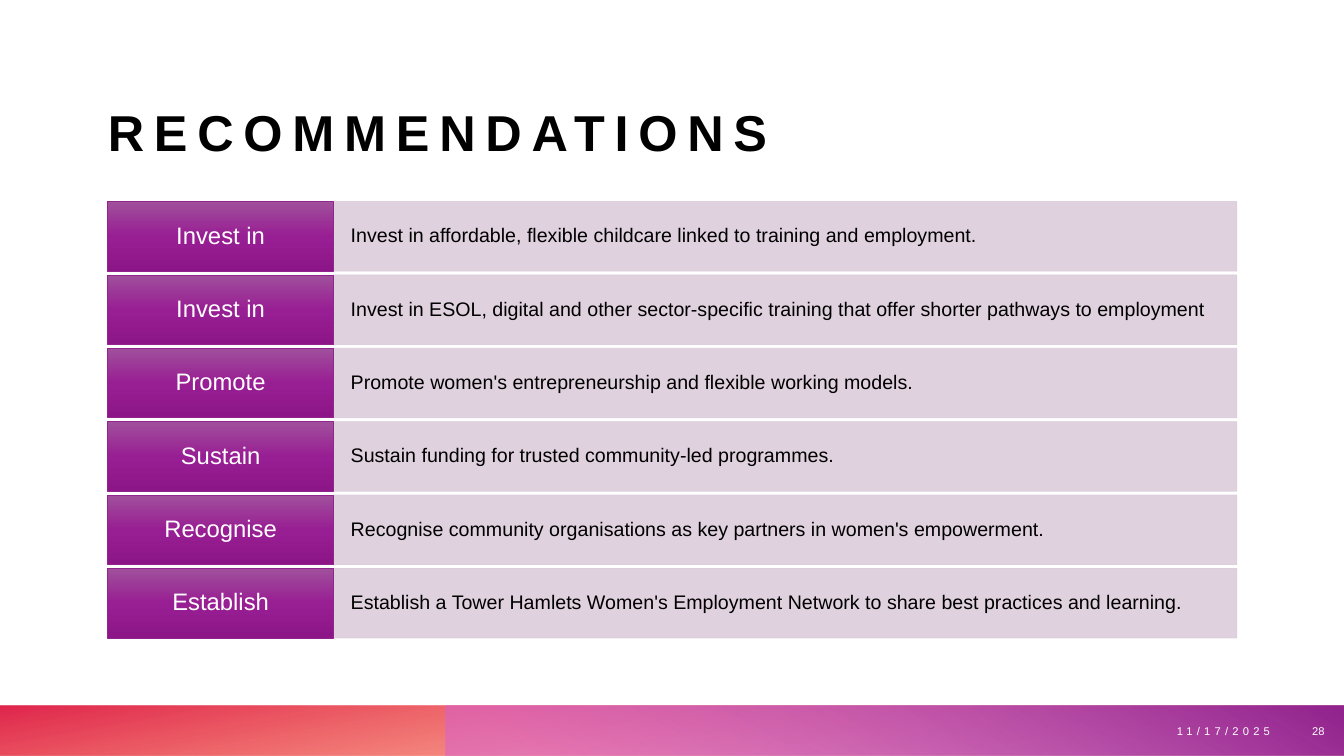
from lxml import etree
from pptx import Presentation
from pptx.dml.color import RGBColor
from pptx.enum import shapes, text
from pptx.oxml import ns
from pptx.util import Pt

RECOMMENDATIONS = [
    ("Invest in", "Invest in affordable, flexible childcare linked to training and employment."),
    ("Invest in", "Invest in ESOL, digital and other sector-specific training that offer "
                  "shorter pathways to employment"),
    ("Promote", "Promote women's entrepreneurship and flexible working models."),
    ("Sustain", "Sustain funding for trusted community-led programmes."),
    ("Recognise", "Recognise community organisations as key partners in women's empowerment."),
    ("Establish", "Establish a Tower Hamlets Women's Employment Network to share best "
                  "practices and learning."),
]
LABEL_GRADIENT = [(0, "A0509C", 100), (50, "981E93", 100), (100, "8C1687", 100)]


def colour(value):
    return RGBColor.from_string(value)


class SlideBuilder:
    font = "Arial"
    black, white = "000000", "FFFFFF"
    purple, pale = "92248E", "DCCDDB"

    def __init__(self, presentation):
        self.slide = presentation.slides.add_slide(presentation.slide_layouts[5])

    def add_text(self, shape, words, size, ink, align=text.PP_ALIGN.LEFT, bold=False,
                 anchor=text.MSO_ANCHOR.MIDDLE, inset=(7.2, 3.6), spacing=0, line_spacing=1):
        frame = shape.text_frame
        frame.word_wrap = True
        frame.auto_size = text.MSO_AUTO_SIZE.NONE
        frame.vertical_anchor = anchor
        frame.margin_left = frame.margin_right = Pt(inset[0])
        frame.margin_top = frame.margin_bottom = Pt(inset[1])
        paragraph = frame.paragraphs[0]
        paragraph.alignment = align
        paragraph.line_spacing = line_spacing
        run = paragraph.add_run()
        run.text = words
        run.font.name = self.font
        run.font.size = Pt(size)
        run.font.bold = bold
        run.font.color.rgb = colour(ink)
        if spacing:
            run.font._element.set("spc", str(spacing * 100))

    def title(self, words, box):
        title = self.slide.shapes.title
        title.left, title.top, title.width, title.height = map(Pt, box)
        self.add_text(title, words, 36, self.black, bold=True, anchor=text.MSO_ANCHOR.BOTTOM,
                      inset=(0, 0), spacing=7)

    def text_box(self, words, box, **style):
        self.add_text(self.slide.shapes.add_textbox(*map(Pt, box)), words, **style)

    def rectangle(self, box, fill=None, gradient=None, angle=90, line=None, opacity=100):
        shape = self.slide.shapes.add_shape(shapes.MSO_SHAPE.RECTANGLE, *map(Pt, box))
        shape.shadow.inherit = False
        if line:
            shape.line.color.rgb = colour(line)
            shape.line.width = Pt(0.5)
        else:
            shape.line.fill.background()
        if gradient:
            self.fill_gradient(shape, gradient, angle)
        else:
            shape.fill.solid()
            shape.fill.fore_color.rgb = colour(fill)
        if opacity < 100:
            for tint in shape._element.spPr.iter(ns.qn("a:srgbClr")):
                self.set_opacity(tint, opacity)
        return shape

    def set_opacity(self, tint, opacity):
        etree.SubElement(tint, ns.qn("a:alpha"), val=str(opacity * 1000))

    def fill_gradient(self, shape, stops, angle):
        gradient = etree.Element(ns.qn("a:gradFill"), rotWithShape="1")
        stop_list = etree.SubElement(gradient, ns.qn("a:gsLst"))
        for position, value, opacity in stops:
            stop = etree.SubElement(stop_list, ns.qn("a:gs"), pos=str(position * 1000))
            tint = etree.SubElement(stop, ns.qn("a:srgbClr"), val=value)
            if opacity < 100:
                self.set_opacity(tint, opacity)
        etree.SubElement(gradient, ns.qn("a:lin"), ang=str(angle * 60000), scaled="0")
        shape._element.spPr.find(ns.qn("a:prstGeom")).addnext(gradient)

    def recommendation(self, top, label, detail):
        left, label_width, detail_width, height = 77, 161.3, 645.2, 49.7
        bar = self.rectangle((left + label_width, top, detail_width, height),
                             fill=self.pale, line=self.pale, opacity=90)
        self.add_text(bar, detail, 14, self.black, inset=(12.2, 12.2), line_spacing=0.9)
        tile = self.rectangle((left, top, label_width, height),
                              gradient=LABEL_GRADIENT, line=self.purple)
        self.add_text(tile, label, 17, self.white, align=text.PP_ALIGN.CENTER,
                      inset=(8.6, 5), line_spacing=0.9)


def main():
    presentation = Presentation()
    presentation.slide_width, presentation.slide_height = Pt(960), Pt(540)
    builder = SlideBuilder(presentation)

    # Footer bands
    builder.rectangle((0, 504, 960, 36), angle=260,
                      gradient=[(14, "FE4A00", 28), (100, "DA002F", 85)])
    builder.rectangle((318, 504, 642, 36), angle=300,
                      gradient=[(9, "D861D4", 55), (99, builder.purple, 100)])

    # Title
    builder.title("RECOMMENDATIONS", (77, 18, 806.4, 97.2))

    # Date and slide number
    footer = dict(size=8, ink=builder.white, align=text.PP_ALIGN.RIGHT)
    builder.text_box("11/17/2025", (622.8, 504.7, 291.6, 35.3), spacing=3, **footer)
    builder.text_box("28", (918.7, 504.7, 34.6, 35.3), **footer)

    # Recommendation rows
    for row, (label, detail) in enumerate(RECOMMENDATIONS):
        builder.recommendation(144 + row * 52.4, label, detail)

    presentation.save("out.pptx")


if __name__ == "__main__":
    main()
